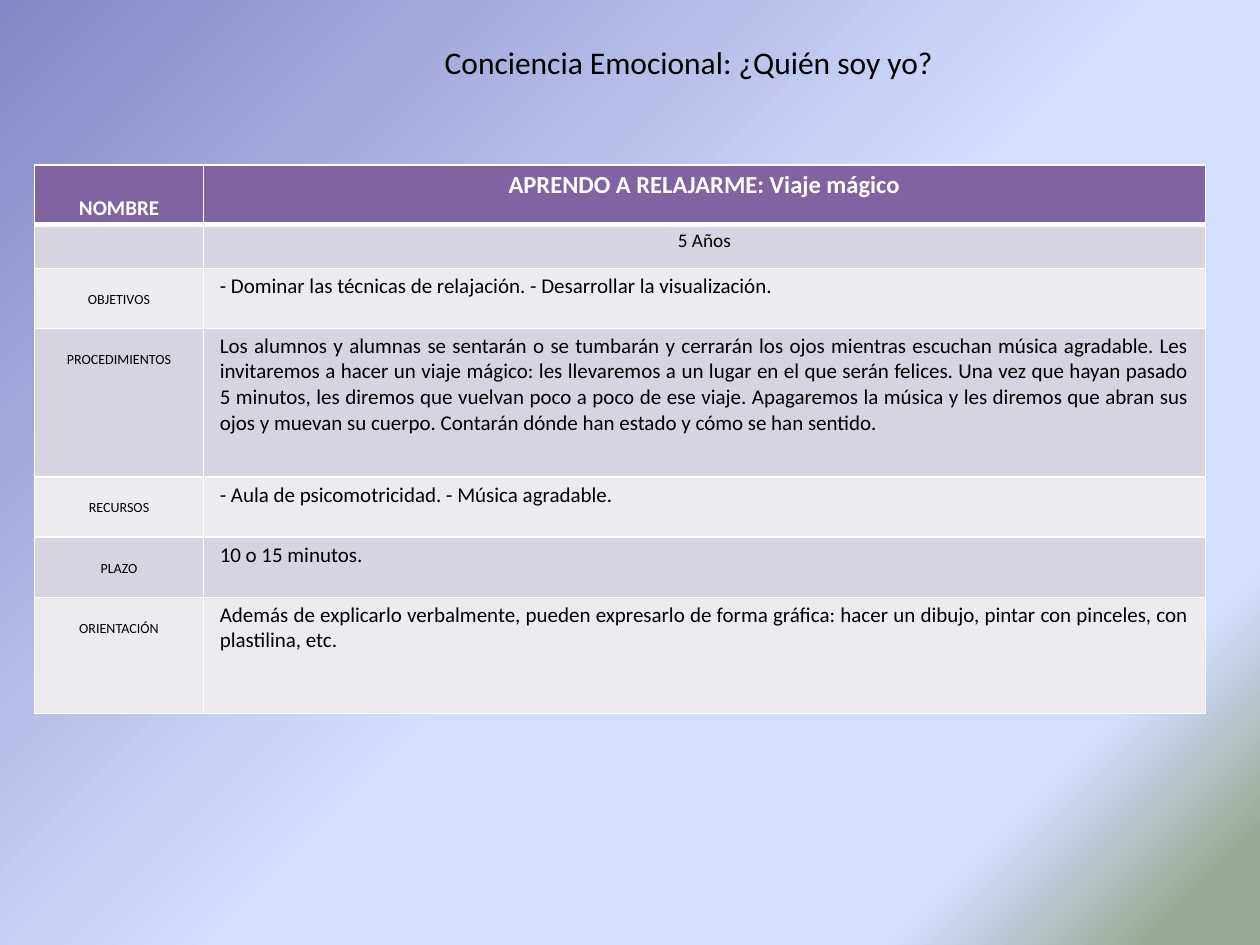
"""Build the relaxation activity slide with its title and description table."""
import dataclasses

import lxml.etree
import pptx
import pptx.dml.color
import pptx.enum.text
import pptx.oxml.ns
import pptx.util

Cm = pptx.util.Cm
Pt = pptx.util.Pt
ALIGN = pptx.enum.text.PP_ALIGN
FONT = "Calibri"
COLORS = {
    "text": "000000",
    "white": "FFFFFF",
    "header": "8064A2",
    "band_dark": "D8D3E0",
    "band_light": "EDEAF0",
}
BACKGROUND_STOPS = ((0, "8488C4"), (53, "D4DEFF"), (62, "D4DEFF"), (83, "D4DEFF"), (95, "96AB94"))
COLUMN_WIDTHS = (3.4, 20.2)


@dataclasses.dataclass
class Row:
    label: str
    body: str
    height: float
    label_size: int = 8
    label_top: float = 0.45
    body_size: int = 12
    body_align: ALIGN = ALIGN.JUSTIFY


ROWS = (
    Row("NOMBRE", "APRENDO A RELAJARME: Viaje mágico", 1.19, 12, 0.61, 14, ALIGN.CENTER),
    Row("", "5 Años", 0.89, label_top=0, body_size=11, body_align=ALIGN.CENTER),
    Row("OBJETIVOS", "- Dominar las técnicas de relajación. - Desarrollar la visualización.", 1.21),
    Row(
        "PROCEDIMIENTOS",
        "Los alumnos y alumnas se sentarán o se tumbarán y cerrarán los ojos mientras escuchan "
        "música agradable. Les invitaremos a hacer un viaje mágico: les llevaremos a un lugar en "
        "el que serán felices. Una vez que hayan pasado 5 minutos, les diremos que vuelvan poco a "
        "poco de ese viaje. Apagaremos la música y les diremos que abran sus ojos y muevan su "
        "cuerpo. Contarán dónde han estado y cómo se han sentido.",
        3.0,
    ),
    Row("RECURSOS", "- Aula de psicomotricidad. - Música agradable.", 1.21),
    Row("PLAZO", "10 o 15 minutos.", 1.21),
    Row(
        "ORIENTACIÓN",
        "Además de explicarlo verbalmente, pueden expresarlo de forma gráfica: hacer un dibujo, "
        "pintar con pinceles, con plastilina, etc.",
        2.34,
    ),
)


def rgb(name: str) -> pptx.dml.color.RGBColor:
    """Return the named colour."""
    return pptx.dml.color.RGBColor.from_string(COLORS[name])


def add_child(parent, tag: str, **attributes: str):
    """Append a DrawingML element and return it."""
    return lxml.etree.SubElement(parent, pptx.oxml.ns.qn(tag), attributes)


def paint_background(page) -> None:
    """Fill the page with the diagonal gradient."""
    fill = page.background.fill
    fill.gradient()
    fill.gradient_angle = 315
    stops = page.element.xpath(".//a:gsLst")[0]
    for stop in list(stops):
        stops.remove(stop)
    for position, color in BACKGROUND_STOPS:
        stop = add_child(stops, "a:gs", pos=str(position * 1000))
        add_child(stop, "a:srgbClr", val=color)


def write(frame, text: str, size: int, align: ALIGN, color: str, bold: bool = False) -> None:
    """Put one formatted paragraph in a text frame."""
    frame.text = text
    para = frame.paragraphs[0]
    para.alignment = align
    para.font.name = FONT
    para.font.size = Pt(size)
    para.font.bold = bold
    para.font.color.rgb = rgb(color)


def add_title(page) -> None:
    """Place and format the slide title."""
    title = page.shapes.title
    title.left, title.top, title.width, title.height = Cm(8.71), Cm(0.74), Cm(10.39), Cm(1.02)
    frame = title.text_frame
    frame.auto_size = pptx.enum.text.MSO_AUTO_SIZE.NONE
    frame.vertical_anchor = pptx.enum.text.MSO_ANCHOR.MIDDLE
    write(frame, "Conciencia Emocional: ¿Quién soy yo?", 18, ALIGN.LEFT, "text")


def format_cell(cell, fill: str, top: float, upper_line: int, lower_line: int) -> None:
    """Set the margins, borders and fill of a cell."""
    cell.margin_left = cell.margin_right = Cm(0.33)
    cell.margin_top, cell.margin_bottom = Cm(top), Cm(0.05)
    properties = cell._tc.get_or_add_tcPr()
    for side, width in (("L", 1), ("R", 1), ("T", upper_line), ("B", lower_line)):
        line = add_child(properties, f"a:ln{side}", w=str(Pt(width)))
        add_child(add_child(line, "a:solidFill"), "a:srgbClr", val=COLORS["white"])
    cell.fill.solid()
    cell.fill.fore_color.rgb = rgb(fill)


def add_activity_table(page) -> None:
    """Draw the activity table row by row."""
    total_height = sum(row.height for row in ROWS)
    frame = page.shapes.add_table(
        len(ROWS), len(COLUMN_WIDTHS), Cm(0.7), Cm(3.33), Cm(sum(COLUMN_WIDTHS)), Cm(total_height)
    )
    table = frame.table
    table.first_row = table.horz_banding = False
    for column, width in zip(table.columns, COLUMN_WIDTHS):
        column.width = Cm(width)
    for index, row in enumerate(ROWS):
        table.rows[index].height = Cm(row.height)
        header = index == 0
        fill = "header" if header else "band_dark" if index % 2 else "band_light"
        color = "white" if header else "text"
        upper_line = 3 if index == 1 else 1
        lower_line = 3 if header else 1
        label, body = table.cell(index, 0), table.cell(index, 1)
        format_cell(label, fill, row.label_top, upper_line, lower_line)
        format_cell(body, fill, 0.1, upper_line, lower_line)
        if row.label:
            write(label.text_frame, row.label, row.label_size, ALIGN.CENTER, color, header)
        write(body.text_frame, row.body, row.body_size, row.body_align, color, header)


def main() -> None:
    """Build and save the deck."""
    deck = pptx.Presentation()
    deck.slide_width, deck.slide_height = Cm(25.4), Cm(19.05)
    page = deck.slides.add_slide(deck.slide_layouts[5])
    paint_background(page)
    add_title(page)
    add_activity_table(page)
    deck.save("out.pptx")


if __name__ == "__main__":
    main()
